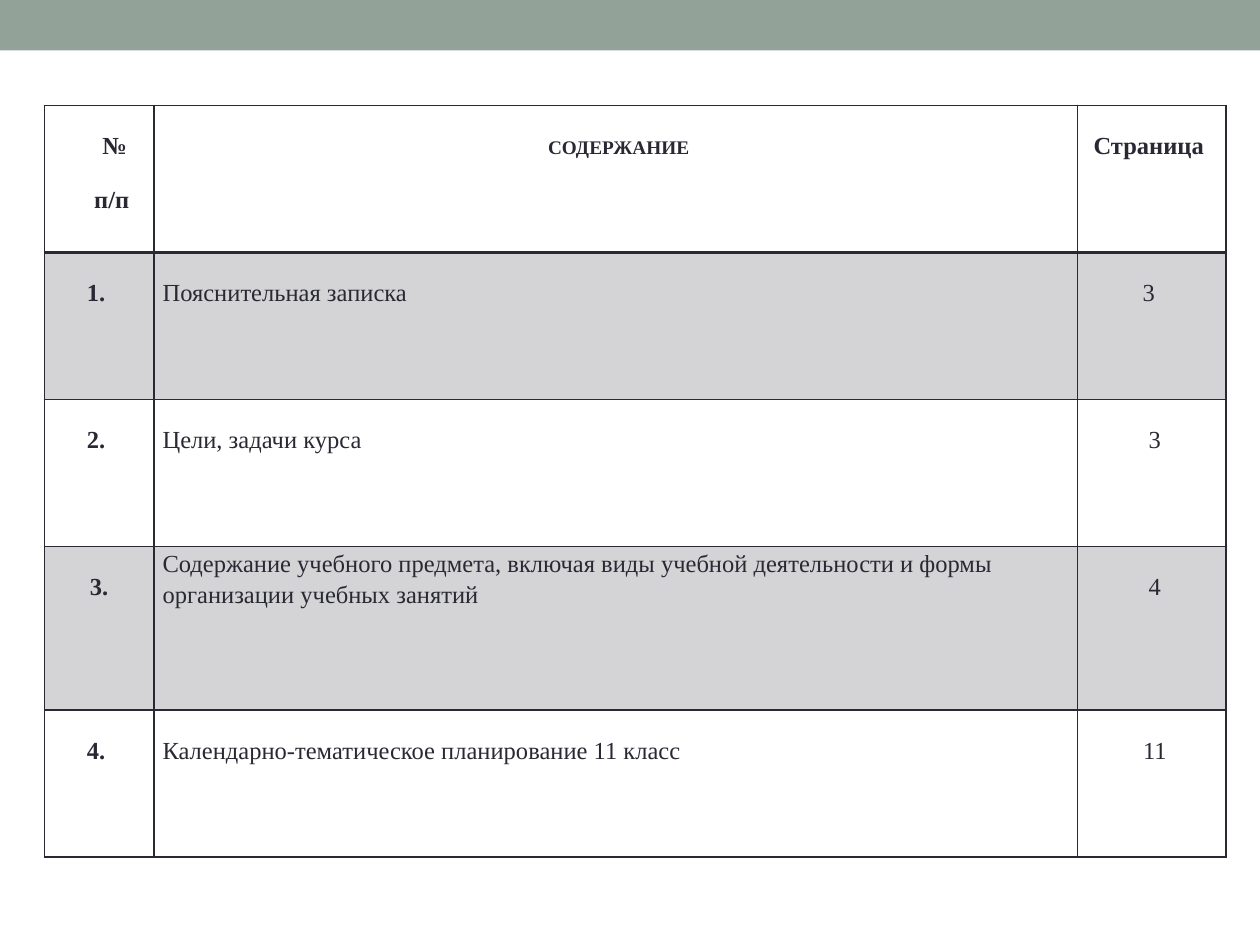
from dataclasses import dataclass

from lxml.etree import SubElement
from pptx import Presentation
from pptx.dml.color import RGBColor
from pptx.enum.shapes import MSO_SHAPE as Shape
from pptx.enum.text import PP_ALIGN as Align
from pptx.oxml.ns import qn
from pptx.util import Pt

INK = RGBColor(0x29, 0x29, 0x34)
SAGE = RGBColor(0x93, 0xA2, 0x99)
FONT = "Times New Roman"
COLS = [62.6, 527.8, 85]
ROWS = [84, 84, 84, 93.6, 84]


@dataclass
class Run:
    text: str
    size: float = 14
    bold: bool = False


@dataclass
class Entry:
    runs: list[Run]
    align: Align = Align.CENTER
    space: float = 2
    indent: float = 0


def line(num: str, title: str, page: str, space: float = 2) -> list[Entry]:
    """Give the three cells of one contents row."""
    return [
        Entry([Run(num, bold=True)]),
        Entry([Run(title)], Align.LEFT, space),
        Entry([Run(page)]),
    ]


HEAD = [
    Entry([Run("№ п/п ", bold=True)], indent=18),
    Entry([Run(" ", bold=True), Run("СОДЕРЖАНИЕ", 11, True)]),
    Entry([Run("Страница ", bold=True)]),
]
GRID = [
    HEAD,
    line("1. ", "Пояснительная записка", "3 "),
    line("2. ", "Цели, задачи курса", " 3"),
    line("3.", "Содержание учебного предмета, включая виды учебной "
         "деятельности и формы организации учебных занятий", " 4", 1.15),
    line("4. ", "Календарно-тематическое планирование 11 класс", " 11"),
]


def add_edge(cell, side: str, width: float) -> None:
    props = cell._tc.get_or_add_tcPr()
    edge = SubElement(props, qn(f"a:ln{side}"), w=str(Pt(width)))
    fill = SubElement(edge, qn("a:solidFill"))
    SubElement(fill, qn("a:srgbClr"), val=str(INK))


def shade(cell) -> None:
    """Tint the cell with ink at 20 % opacity."""
    cell.fill.solid()
    cell.fill.fore_color.rgb = INK
    color = cell._tc.tcPr.find(qn("a:solidFill"))[0]
    SubElement(color, qn("a:alpha"), val="20000")


def write(cell, entry: Entry) -> None:
    cell.margin_left = cell.margin_right = Pt(5)
    cell.margin_top = cell.margin_bottom = Pt(0)
    para = cell.text_frame.paragraphs[0]
    para.alignment = entry.align
    para.line_spacing = entry.space
    if entry.indent:
        para._p.get_or_add_pPr().set("marL", str(Pt(entry.indent)))
    for item in entry.runs:
        run = para.add_run()
        run.text = item.text
        font = run.font
        font.name, font.size, font.bold = FONT, Pt(item.size), item.bold
        font.color.rgb = INK


def add_band(slide) -> None:
    band = slide.shapes.add_shape(Shape.RECTANGLE, 0, 0, Pt(720), Pt(28.8))
    band.shadow.inherit = False
    band.fill.solid()
    band.fill.fore_color.rgb = SAGE
    band.line.fill.background()


def add_grid(slide) -> None:
    table = slide.shapes.add_table(
        len(ROWS), len(COLS), Pt(25.3), Pt(60.2), Pt(sum(COLS)), Pt(sum(ROWS))
    ).table
    table.first_row = table.horz_banding = False
    for col, width in zip(table.columns, COLS):
        col.width = Pt(width)
    for row, height in zip(table.rows, ROWS):
        row.height = Pt(height)
    for r, entries in enumerate(GRID):
        for c, entry in enumerate(entries):
            cell = table.cell(r, c)
            write(cell, entry)
            for side in "LRTB":
                thick = (r, side) in ((0, "B"), (1, "T"))
                add_edge(cell, side, 2 if thick else 1)
            if r % 2:
                shade(cell)
            else:
                cell.fill.background()


def main() -> None:
    deck = Presentation()
    deck.slide_width, deck.slide_height = Pt(720), Pt(540)
    slide = deck.slides.add_slide(deck.slide_layouts[6])
    add_band(slide)
    add_grid(slide)
    deck.save("out.pptx")


if __name__ == "__main__":
    main()
